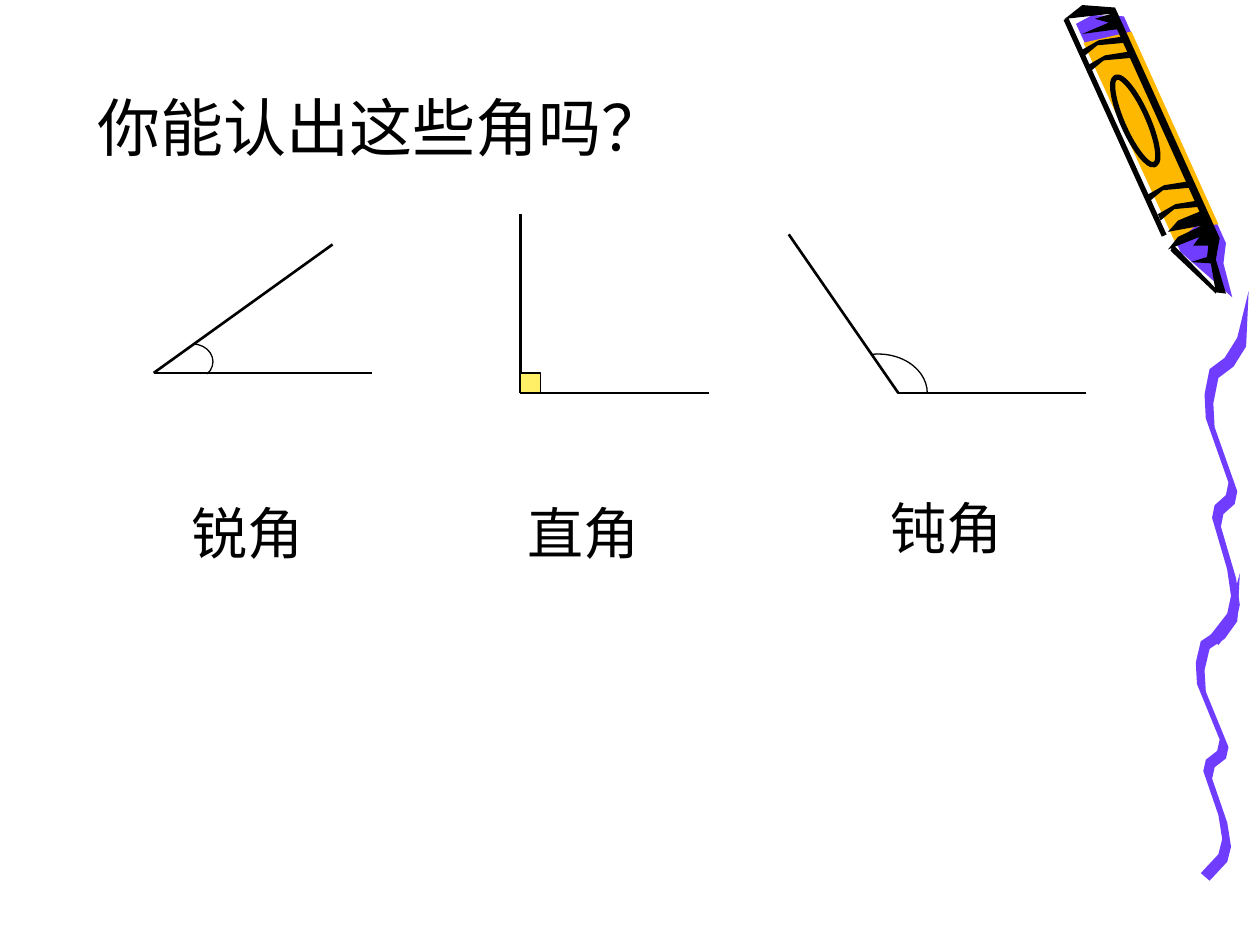
from dataclasses import dataclass
from typing import Optional

from lxml import etree
from pptx import Presentation
from pptx.dml.color import RGBColor
from pptx.enum.shapes import MSO_CONNECTOR, MSO_SHAPE
from pptx.enum.text import MSO_ANCHOR, MSO_AUTO_SIZE, PP_ALIGN
from pptx.oxml.ns import qn
from pptx.util import Emu, Inches, Pt

LINE = MSO_CONNECTOR.STRAIGHT
ARC, OVAL, RECT = MSO_SHAPE.ARC, MSO_SHAPE.OVAL, MSO_SHAPE.RECTANGLE
LEFT, BOTTOM = PP_ALIGN.LEFT, MSO_ANCHOR.BOTTOM
GROW, FIXED = MSO_AUTO_SIZE.SHAPE_TO_FIT_TEXT, MSO_AUTO_SIZE.NONE

CELL = 9144  # the grid has 1000 columns and 750 rows
Point = tuple[int, int]


@dataclass(frozen=True)
class Theme:
    font: str = "Comic Neue"
    ink: RGBColor = RGBColor(0, 0, 0)
    wax: RGBColor = RGBColor(0x70, 0x3D, 0xFF)
    wrap: RGBColor = RGBColor(0xFF, 0xB8, 0x00)
    mark: RGBColor = RGBColor(0xFF, 0xEF, 0x66)
    title: float = 36
    label: float = 32
    ray: float = 1.5
    thin: float = 0.75
    pen: float = 3


@dataclass(frozen=True)
class Arc:
    mid: Point
    radii: Point
    start: float  # degrees, clockwise from the right
    end: float


@dataclass(frozen=True)
class Angle:
    name: str
    tip: Point  # end of the slanted or upright ray
    corner: Point
    reach: int  # length of the level ray
    label: Point
    width: int
    arc: Optional[Arc] = None  # a right angle has a square


THEME = Theme()
SQUARE = 16

ANGLES = [
    Angle("锐角", (264, 194), (122, 296), 173, (142, 391), 118,
          Arc((153, 287), (16, 14), 270, 41)),
    Angle("直角", (413, 170), (413, 312), 150, (409, 391), 146),
    Angle("钝角", (626, 186), (713, 312), 149, (697, 387), 114,
          Arc((697, 312), (39, 31), 261, 0)),
]

# Crayon outlines
BODY = [(854, 19), (937, 200), (978, 236), (971, 209), (973, 193),
        (892, 13), (867, 12)]
SLEEVE = [(933, 193), (948, 180), (967, 178), (898, 25), (860, 34)]
TIP = [(929, 199), (965, 233), (966, 230), (931, 194)]
CAP = [(859, 27), (889, 23), (882, 11), (869, 15), (880, 18)]
EDGE = [(927, 198), (935, 188), (954, 179), (927, 184), (935, 175),
        (952, 168), (881, 11), (845, 15), (859, 4), (885, 6), (968, 189),
        (965, 206), (973, 233), (965, 232), (961, 209), (945, 208),
        (958, 204), (959, 195), (947, 195), (952, 188)]
BAND = [(0, 0), (11, -9), (33, -11), (31, -16), (12, -13), (-2, -5)]
BANDS = [(860, 45), (865, 57), (912, 160), (921, 175)]

# One wave, drawn twice: the second is lower and flatter
WAVE = [(960, 505), (974, 487), (977, 473), (974, 452), (962, 411),
        (964, 401), (973, 393), (975, 383), (957, 332), (956, 313),
        (960, 293), (972, 284), (982, 268), (991, 231)]
THICK = (7, 7)
TOP, DROP, BACK, FLAT = 231, 224, 7, 0.87


def grid(*cells: int) -> list[Emu]:
    return [Emu(cell * CELL) for cell in cells]


def shift(points: list[Point], by: Point) -> list[Point]:
    return [(x + by[0], y + by[1]) for x, y in points]


def draw_line(shapes, start: Point, end: Point, width: float) -> None:
    line = shapes.add_connector(LINE, *grid(*start, *end))
    line.line.color.rgb = THEME.ink
    line.line.width = Pt(width)
    etree.SubElement(line._element.spPr, qn("a:effectLst"))


def draw_patch(shapes, color: RGBColor, points: list[Point]) -> None:
    pen = shapes.build_freeform(*points[0], scale=CELL)
    pen.add_line_segments(points[1:], close=True)
    form = pen.convert_to_shape()
    form.shadow.inherit = False
    form.fill.solid()
    form.fill.fore_color.rgb = color
    form.line.fill.background()


def draw_ring(shapes, kind, mid: Point, radii: Point, width: float):
    (x, y), (rx, ry) = mid, radii
    ring = shapes.add_shape(kind, *grid(x - rx, y - ry, 2 * rx, 2 * ry))
    ring.shadow.inherit = False
    ring.fill.background()
    ring.line.color.rgb = THEME.ink
    ring.line.width = Pt(width)
    return ring


def draw_crayon(shapes) -> None:
    draw_patch(shapes, THEME.wax, BODY)
    draw_patch(shapes, THEME.wrap, SLEEVE)
    ribbon = WAVE + shift(WAVE[-2::-1], THICK)
    lower = [(x - BACK, round(TOP + DROP + (y - TOP) * FLAT))
             for x, y in ribbon]
    for wave in (lower, ribbon):
        draw_patch(shapes, THEME.wax, wave)
    for part in (TIP, CAP, EDGE, *(shift(BAND, spot) for spot in BANDS)):
        draw_patch(shapes, THEME.ink, part)
    oval = draw_ring(shapes, OVAL, (901, 96), (10, 38), THEME.pen)
    oval.rotation = -24
    draw_line(shapes, (846, 15), (924, 187), THEME.pen)


def draw_mark(shapes, angle: Angle) -> None:
    if angle.arc:
        arc = angle.arc
        ring = draw_ring(shapes, ARC, arc.mid, arc.radii, THEME.thin)
        for i, turn in enumerate((arc.start, arc.end)):
            ring.adjustments[i] = turn * 0.6  # 60000 units a degree
    else:
        half = SQUARE // 2
        x, y = angle.corner
        box = draw_ring(shapes, RECT, (x + half, y - half), (half, half),
                        THEME.thin)
        box.fill.solid()
        box.fill.fore_color.rgb = THEME.mark


def write(frame, text: str, size: float) -> None:
    frame.word_wrap = True
    frame.text = text
    para = frame.paragraphs[0]
    para.alignment = LEFT
    para.font.name = THEME.font
    para.font.size = Pt(size)
    para.font.color.rgb = THEME.ink


def draw_angle(shapes, angle: Angle) -> None:
    x, y = angle.corner
    draw_line(shapes, angle.tip, angle.corner, THEME.ray)
    draw_line(shapes, angle.corner, (x + angle.reach, y), THEME.ray)
    draw_mark(shapes, angle)
    box = shapes.add_textbox(*grid(*angle.label, angle.width, 63))
    write(box.text_frame, angle.name, THEME.label)
    box.text_frame.auto_size = GROW


def main() -> None:
    deck = Presentation()
    deck.slide_width, deck.slide_height = Inches(10), Inches(7.5)
    shapes = deck.slides.add_slide(deck.slide_layouts[5]).shapes
    draw_crayon(shapes)

    # Question
    title = shapes.title
    title.left, title.top, title.width, title.height = grid(67, 64, 835, 71)
    write(title.text_frame, "你能认出这些角吗？", THEME.title)
    title.text_frame.vertical_anchor = BOTTOM
    title.text_frame.auto_size = FIXED

    # Three angles with their names
    for angle in ANGLES:
        draw_angle(shapes, angle)

    deck.save("out.pptx")


if __name__ == "__main__":
    main()
